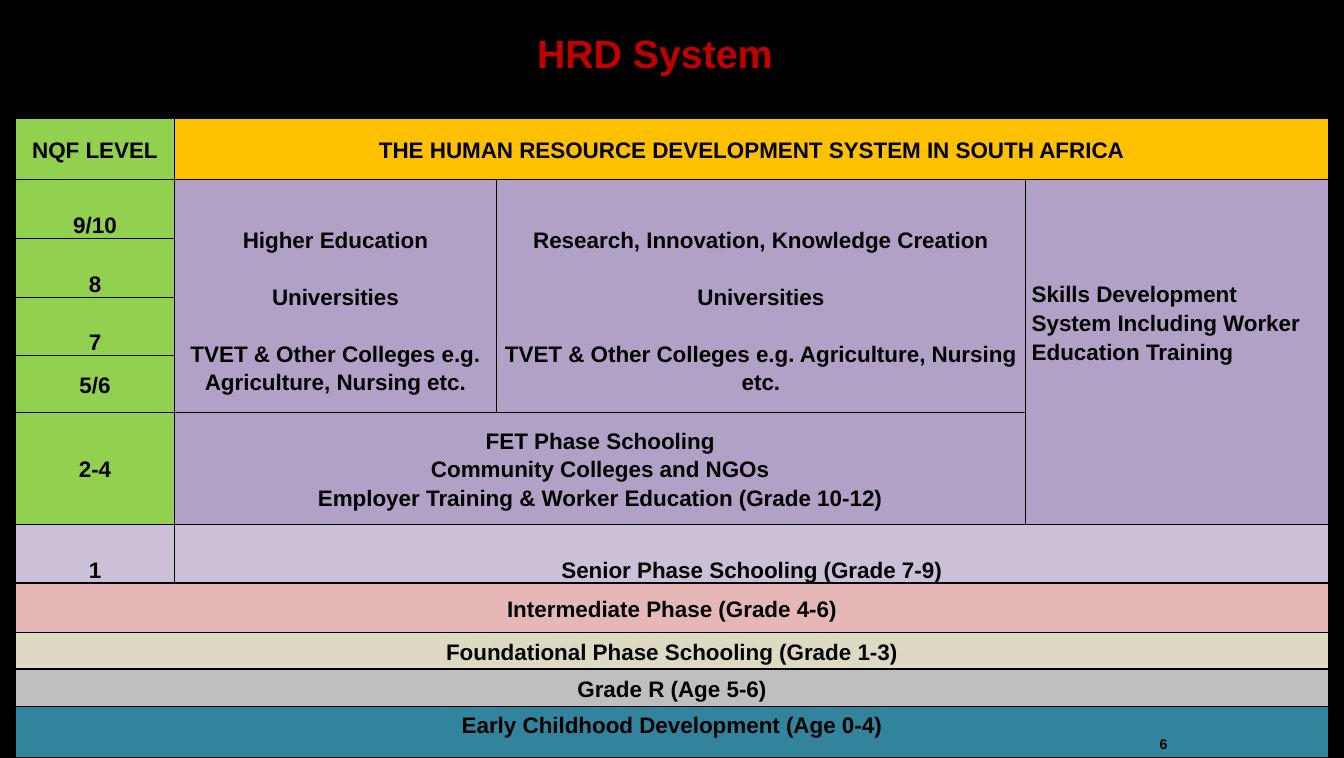
"""Build the slide on the human resource development system."""
from dataclasses import dataclass

from lxml import etree
from pptx import Presentation
from pptx.dml.color import RGBColor
from pptx.enum.text import MSO_ANCHOR as Anchor, PP_ALIGN as Align
from pptx.oxml.ns import qn
from pptx.util import Inches, Pt


@dataclass(frozen=True)
class Theme:
    font: str = "Arial"
    black: str = "000000"
    title: str = "C00000"
    level: str = "92D050"
    header: str = "FFC000"
    college: str = "B2A1C7"
    senior: str = "CCC0D9"
    intermediate: str = "E5B8B7"
    foundation: str = "DDD9C3"
    reception: str = "BFBFBF"
    childhood: str = "31849B"
    title_size: int = 28
    cell_size: int = 16
    number_size: int = 10


@dataclass(frozen=True)
class Block:
    row: int
    column: int
    lines: tuple
    fill: str
    rows: int = 1
    columns: int = 1
    anchor: Anchor = Anchor.MIDDLE
    align: Align = Align.CENTER
    top: float = 0
    gap: int = 0


THEME = Theme()
COLUMNS = (1.58, 3.18, 5.24, 3)
ROWS = (0.61, 0.58, 0.58, 0.58, 0.56, 1.11, 0.58, 0.49, 0.36, 0.37, 0.51)
LEVELS = ("9/10", "8", "7", "5/6", "2-4")
COLLEGES = ("Universities", "TVET & Other Colleges e.g. Agriculture, Nursing etc.")
PHASES = (
    ("Intermediate Phase (Grade 4-6)", THEME.intermediate),
    ("Foundational Phase Schooling (Grade 1-3)", THEME.foundation),
    ("Grade R (Age 5-6)", THEME.reception),
)
BLOCKS = [
    Block(0, 0, ("NQF LEVEL",), THEME.level),
    Block(0, 1, ("THE HUMAN RESOURCE DEVELOPMENT SYSTEM IN SOUTH AFRICA",),
          THEME.header, columns=3),
    *(Block(row, 0, (level,), THEME.level,
            anchor=Anchor.BOTTOM if row < 4 else Anchor.MIDDLE)
      for row, level in enumerate(LEVELS, 1)),
    *(Block(1, column, (heading, *COLLEGES), THEME.college, rows=4, top=0.28, gap=20)
      for column, heading in enumerate(
          ("Higher Education", "Research, Innovation, Knowledge Creation"), 1)),
    Block(1, 3, ("Skills Development System Including Worker Education Training",),
          THEME.college, rows=5, anchor=Anchor.TOP, align=Align.LEFT, top=0.98),
    Block(5, 1, ("FET Phase Schooling", "Community Colleges and NGOs",
                 "Employer Training & Worker Education (Grade 10-12)"),
          THEME.college, columns=2),
    Block(6, 0, ("1",), THEME.senior, anchor=Anchor.BOTTOM),
    Block(6, 1, ("Senior Phase Schooling (Grade 7-9)",), THEME.senior,
          columns=3, anchor=Anchor.BOTTOM),
    *(Block(row, 0, (phase,), fill, columns=4)
      for row, (phase, fill) in enumerate(PHASES, 7)),
    Block(10, 0, ("Early Childhood Development (Age 0-4)",), THEME.childhood,
          columns=4, anchor=Anchor.TOP, top=0.03),
]


def format_paragraph(paragraph, size, color, align):
    """Align a paragraph and style its runs."""
    paragraph.alignment = align
    for span in paragraph.runs:
        span.font.name = THEME.font
        span.font.size = Pt(size)
        span.font.bold = True
        span.font.color.rgb = RGBColor.from_string(color)


def add_borders(cell):
    """Draw a thin black line on each side of a cell."""
    properties = cell._tc.get_or_add_tcPr()
    for side in ("a:lnL", "a:lnR", "a:lnT", "a:lnB"):
        line = etree.SubElement(properties, qn(side), w=str(Pt(1)))
        fill = etree.SubElement(line, qn("a:solidFill"))
        etree.SubElement(fill, qn("a:srgbClr"), val=THEME.black)


def fill_block(table, block):
    """Merge, colour and write one block of the table."""
    cell = table.cell(block.row, block.column)
    if block.rows * block.columns > 1:
        cell.merge(table.cell(block.row + block.rows - 1,
                              block.column + block.columns - 1))
    cell.fill.solid()
    cell.fill.fore_color.rgb = RGBColor.from_string(block.fill)
    cell.vertical_anchor = block.anchor
    cell.margin_left = cell.margin_right = Inches(0.06)
    cell.margin_top, cell.margin_bottom = Inches(block.top), Inches(0)
    cell.text_frame.text = "\n".join(block.lines)
    for index, paragraph in enumerate(cell.text_frame.paragraphs):
        format_paragraph(paragraph, THEME.cell_size, THEME.black, block.align)
        paragraph.line_spacing = 1.15
        if index and block.gap:
            paragraph.space_before = Pt(block.gap)


def add_system_table(slide):
    """Add the table of levels, sectors and phases."""
    frame = slide.shapes.add_table(len(ROWS), len(COLUMNS), Inches(0.15), Inches(1.17),
                                   Inches(sum(COLUMNS)), Inches(sum(ROWS)))
    table = frame.table
    for column, width in zip(table.columns, COLUMNS):
        column.width = Inches(width)
    for row, height in zip(table.rows, ROWS):
        row.height = Inches(height)
        for cell in row.cells:
            cell.margin_top = cell.margin_bottom = Inches(0)
            add_borders(cell)
    for block in BLOCKS:
        fill_block(table, block)


def set_title(slide, text):
    """Place and style the slide title."""
    title = slide.shapes.title
    title.left, title.top = Inches(2.48), Inches(0.13)
    title.width, title.height = Inches(8), Inches(0.78)
    title.text_frame.text = text
    title.text_frame.vertical_anchor = Anchor.MIDDLE
    format_paragraph(title.text_frame.paragraphs[0], THEME.title_size,
                     THEME.title, Align.CENTER)


def add_page_number(slide, text):
    """Add the page number over the last row."""
    box = slide.shapes.add_textbox(Inches(9.32), Inches(7.23), Inches(2.33), Inches(0.27))
    box.text_frame.word_wrap = True
    box.text_frame.vertical_anchor = Anchor.MIDDLE
    box.text_frame.text = text
    format_paragraph(box.text_frame.paragraphs[0], THEME.number_size,
                     THEME.black, Align.RIGHT)


def main():
    """Build and save the deck."""
    deck = Presentation()
    deck.slide_width, deck.slide_height = Inches(13.3), Inches(7.5)
    slide = deck.slides.add_slide(deck.slide_layouts[5])
    slide.background.fill.solid()
    slide.background.fill.fore_color.rgb = RGBColor.from_string(THEME.black)
    set_title(slide, "HRD System")
    add_system_table(slide)
    add_page_number(slide, "6")
    deck.save("out.pptx")


if __name__ == "__main__":
    main()
